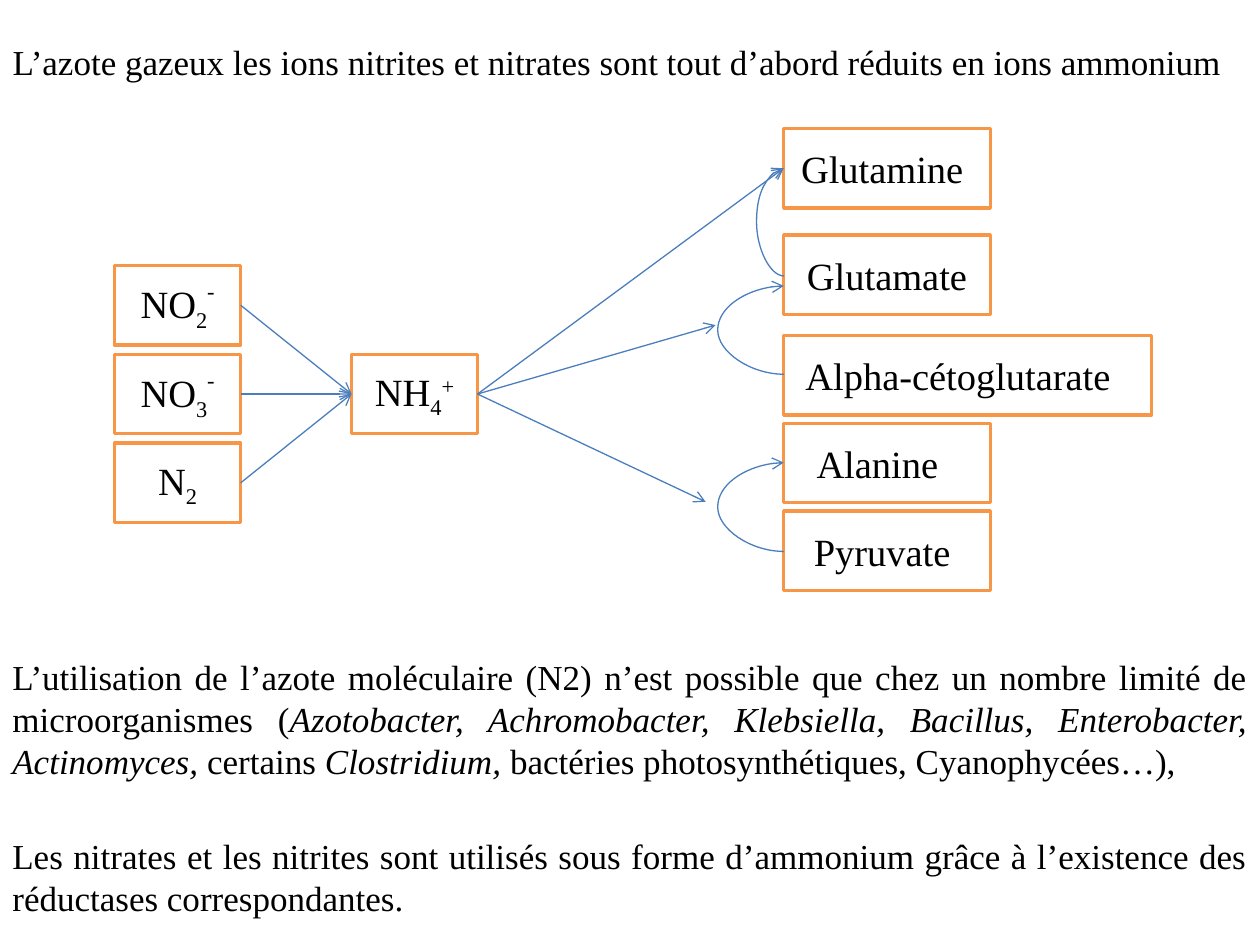
from lxml import etree
from pptx import Presentation
from pptx.dml.color import RGBColor
from pptx.enum.shapes import MSO_CONNECTOR, MSO_SHAPE
from pptx.enum.text import MSO_ANCHOR, MSO_AUTO_SIZE, PP_ALIGN
from pptx.oxml.ns import qn
from pptx.util import Inches, Pt

RECT = MSO_SHAPE.RECTANGLE
LINE, CURVE = MSO_CONNECTOR.STRAIGHT, MSO_CONNECTOR.CURVE
TOP, MID = MSO_ANCHOR.TOP, MSO_ANCHOR.MIDDLE
LEFT, MIDDLE, JUST = PP_ALIGN.LEFT, PP_ALIGN.CENTER, PP_ALIGN.JUSTIFY

WIDE, HIGH = Inches(10), Inches(7.5)
THIN = 1588
BOX_H = 8.4
SPACE = 0.76
NEAR, HUB, FAR = 9.1, 27.9, 62.2
SMALL, BIG, LONG = 10, 16.4, 29.2

IONS = [
    (NEAR, 28.1, SMALL, [("NO", 0), ("2", -25), ("-", 50)], 0),
    (NEAR, 37.5, SMALL, [("NO", 0), ("3", -25), ("-", 50)], 0),
    (NEAR, 46.9, SMALL, [("N", 0), ("2", -25)], 0),
    (HUB, 37.5, SMALL, [("NH", 0), ("4", -25), ("+", 30)], 0),
]
ACIDS = [
    (FAR, 13.6, BIG, [("Glutamine", 0)], 1),
    (FAR, 24.9, BIG, [("Glutamate", 0)], 0),
    (FAR, 35.5, LONG, [("Alpha-cétoglutarate", 0)], 2),
    (FAR, 44.8, BIG, [("Alanine", 0)], 2),
    (FAR, 54.1, BIG, [("Pyruvate", 0)], 1),
]
GOALS = [(FAR, 17.8), (56.8, 34.4), (56, 53.1)]
BENDS = [(17.8, 29.2, 2.4), (30.25, 39.6, 5.8), (48.95, 58.35, 5.8)]

HEAD = "L’azote gazeux les ions nitrites et nitrates sont tout d’abord réduits en ions ammonium"
USE = [
    ("L’utilisation de l’azote moléculaire (N2) n’est possible que chez un nombre "
     "limité de microorganismes (", False),
    ("Azotobacter, Achromobacter, Klebsiella, Bacillus, Enterobacter, Actinomyces, ", True),
    ("certains ", False),
    ("Clostridium, ", True),
    ("bactéries photosynthétiques, Cyanophycées…),", False),
]
END = [("Les nitrates et les nitrites sont utilisés sous forme d’ammonium grâce à "
        "l’existence des réductases correspondantes.", False)]


def col(n):
    return round(WIDE * n / 100)


def row(n):
    return round(HIGH * n / 100)


def tint(code):
    return RGBColor.from_string(code)


def apply(item, look):
    for name, value in look.items():
        setattr(item, name, value)


def add_run(para, text, size, slant=False, base=0):
    run = para.add_run()
    run.text = text
    apply(run.font, {"name": "Times New Roman", "size": Pt(size),
                     "bold": False, "italic": slant})
    run.font.color.rgb = tint("000000")
    if base:
        run.font._element.set("baseline", str(base * 1000))


def fill_text(frame, parts, align):
    apply(frame, {"word_wrap": True, "vertical_anchor": TOP,
                  "auto_size": MSO_AUTO_SIZE.NONE})
    para = frame.paragraphs[0]
    para.alignment = align
    for text, slant in parts:
        add_run(para, text, 20, slant)


def add_head(slide):
    head = slide.shapes.title
    apply(head, {"left": 0, "top": row(3.6), "width": WIDE, "height": row(5.9)})
    fill_text(head.text_frame, [(HEAD, False)], LEFT)


def add_note(slide, top, tall, parts):
    note = slide.shapes.add_textbox(0, row(top), WIDE, row(tall))
    fill_text(note.text_frame, parts, JUST)


def add_box(slide, left, top, wide, parts, pad):
    box = slide.shapes.add_shape(RECT, col(left), row(top), col(wide), row(BOX_H))
    box.shadow.inherit = False
    box.fill.solid()
    box.fill.fore_color.rgb = tint("FFFFFF")
    box.line.color.rgb = tint("F79646")
    box.line.width = Pt(2)
    frame = box.text_frame
    apply(frame, {"vertical_anchor": MID, "word_wrap": True,
                  "margin_right": col(1 + pad * SPACE)})
    para = frame.paragraphs[0]
    para.alignment = MIDDLE
    for text, base in parts:
        add_run(para, text, 22, base=base)


def style(link):
    link.line.color.rgb = tint("4B7EBC")
    link.line.width = Pt(0.75)
    tail = etree.SubElement(link.line._get_or_add_ln(), qn("a:tailEnd"))
    tail.set("type", "arrow")
    etree.SubElement(link._element.spPr, qn("a:effectLst"))


def add_arrow(slide, start, goal):
    link = slide.shapes.add_connector(LINE, col(start[0]), row(start[1]),
                                      col(goal[0]), row(goal[1]))
    style(link)


def add_bend(slide, top, low, bulge):
    left = col(FAR)
    link = slide.shapes.add_connector(CURVE, left, row(top), left + THIN, row(low))
    props = link._element.spPr
    props.find(qn("a:xfrm")).set("rot", "10800000")
    geom = props.find(qn("a:prstGeom"))
    geom.set("prst", "curvedConnector3")
    guide = etree.SubElement(geom.find(qn("a:avLst")), qn("a:gd"))
    guide.set("name", "adj1")
    guide.set("fmla", f"val {round(col(bulge) / THIN * 100000)}")
    style(link)


def main():
    deck = Presentation()
    deck.slide_width, deck.slide_height = WIDE, HIGH
    slide = deck.slides.add_slide(deck.slide_layouts[5])
    add_head(slide)
    add_note(slide, 68.7, 14.8, USE)
    add_note(slide, 87.6, 10.3, END)
    for box in IONS + ACIDS:
        add_box(slide, *box)
    hub = (HUB, 41.7)
    for left, top, wide, *_ in IONS[:3]:
        add_arrow(slide, (left + wide, top + BOX_H / 2), hub)
    for goal in GOALS:
        add_arrow(slide, (HUB + SMALL, 41.7), goal)
    for bend in BENDS:
        add_bend(slide, *bend)
    deck.save("out.pptx")


if __name__ == "__main__":
    main()
